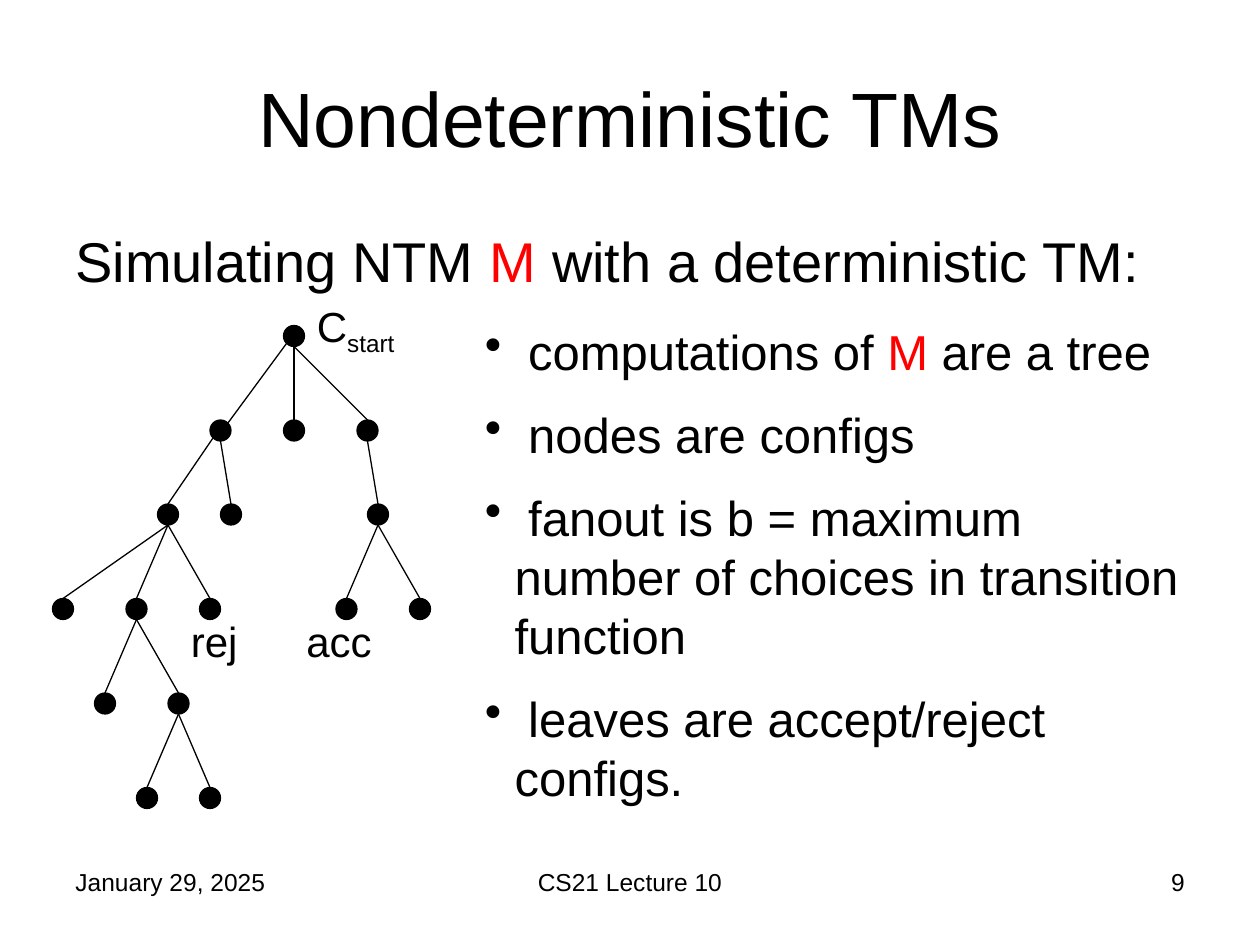
from lxml import etree
from pptx import Presentation
from pptx.dml.color import RGBColor
from pptx.enum.shapes import MSO_CONNECTOR, MSO_SHAPE
from pptx.enum.text import MSO_ANCHOR, PP_ALIGN
from pptx.oxml.ns import qn
from pptx.util import Pt

COLORS = {"ink": "000000", "machine": "FF0000"}
FONT = "Arial"

# Text boxes: (left, top, width, height), size, alignment, anchor, runs as (text, color)
TEXTS = [
    ((36, 21.6, 648, 90), 44, PP_ALIGN.CENTER, MSO_ANCHOR.MIDDLE,
     [("Nondeterministic TMs", "ink")]),
    ((36, 126, 648, 48), 32, PP_ALIGN.LEFT, MSO_ANCHOR.TOP,
     [("Simulating NTM ", "ink"), ("M", "machine"), (" with a deterministic TM:", "ink")]),
    ((102, 348, 90, 36), 24, PP_ALIGN.LEFT, MSO_ANCHOR.TOP, [("rej", "ink")]),
    ((168, 348, 90, 36), 24, PP_ALIGN.LEFT, MSO_ANCHOR.TOP, [("acc", "ink")]),
    ((36, 492, 168, 37.5), 14, PP_ALIGN.LEFT, MSO_ANCHOR.TOP, [("January 29, 2025", "ink")]),
    ((246, 492, 228, 37.5), 14, PP_ALIGN.CENTER, MSO_ANCHOR.TOP, [("CS21 Lecture 10", "ink")]),
    ((516, 492, 168, 37.5), 14, PP_ALIGN.RIGHT, MSO_ANCHOR.TOP, [("9", "ink")]),
]
START_LABEL = ((174, 168, 90, 36), 24, [("C", "ink"), ("start", "ink")])
BULLETS = [
    [(" computations of ", "ink"), ("M", "machine"), (" are a tree", "ink")],
    [(" nodes are configs", "ink")],
    [(" fanout is b = maximum number of choices in transition function", "ink")],
    [(" leaves are accept/reject configs.", "ink")],
]
BULLET_BOX, BULLET_SIZE, BULLET_INDENT = (270, 180, 414, 293), 28, 17

# Computation tree: top of each level and left of each node in it
NODE_SIZE = 12
LEVELS = [
    (186, [162]),
    (240, [120, 162, 204]),
    (288, [90, 126, 210]),
    (342, [30, 72, 114, 192, 234]),
    (396, [54, 96]),
    (450, [78, 114]),
]
# Parent index in the level above, for each node
PARENTS = [[], [0, 0, 0], [0, 0, 2], [0, 0, 0, 2, 2], [1, 1], [1, 1]]
# Points on a node, as fractions of its size
TOP, BOTTOM, TOP_RIGHT, BOTTOM_LEFT = (0.5, 0), (0.5, 1), (0.85, 0.15), (0.15, 0.85)
# Edges that leave or enter at the side, by level and child index
SIDE_EDGES = {(1, 0): (BOTTOM_LEFT, TOP_RIGHT), (2, 0): (BOTTOM_LEFT, TOP)}

presentation = Presentation()
presentation.slide_width, presentation.slide_height = Pt(720), Pt(540)
slide = presentation.slides.add_slide(presentation.slide_layouts[6])


def color(name):
    return RGBColor.from_string(COLORS[name])


def add_frame(box):
    text_frame = slide.shapes.add_textbox(*map(Pt, box)).text_frame
    text_frame.word_wrap = True
    return text_frame


def write(paragraph, runs, size):
    for text, color_name in runs:
        run = paragraph.add_run()
        run.text = text
        run.font.name, run.font.size = FONT, Pt(size)
        run.font.color.rgb = color(color_name)


def node_point(level, index, fraction):
    top, lefts = LEVELS[level]
    return Pt(lefts[index] + fraction[0] * NODE_SIZE), Pt(top + fraction[1] * NODE_SIZE)


# Title, statement, leaf labels and footer
for box, size, alignment, anchor, runs in TEXTS:
    text_frame = add_frame(box)
    text_frame.vertical_anchor = anchor
    text_frame.paragraphs[0].alignment = alignment
    write(text_frame.paragraphs[0], runs, size)

# Label of the start configuration, with its subscript
box, size, runs = START_LABEL
paragraph = add_frame(box).paragraphs[0]
write(paragraph, runs, size)
paragraph.runs[1].font._element.set("baseline", "-25000")

# Bullet list
text_frame = add_frame(BULLET_BOX)
for index, runs in enumerate(BULLETS):
    paragraph = text_frame.add_paragraph() if index else text_frame.paragraphs[0]
    write(paragraph, runs, BULLET_SIZE)
    if index:
        paragraph.space_before = Pt(BULLET_SIZE / 2)
    properties = paragraph._p.get_or_add_pPr()
    properties.set("marL", str(Pt(BULLET_INDENT)))
    properties.set("indent", str(-Pt(BULLET_INDENT)))
    etree.SubElement(properties, qn("a:buChar")).set("char", "•")

# Tree nodes and the edges to their parents
for level, (top, lefts) in enumerate(LEVELS):
    for index, left in enumerate(lefts):
        node = slide.shapes.add_shape(
            MSO_SHAPE.OVAL, Pt(left), Pt(top), Pt(NODE_SIZE), Pt(NODE_SIZE))
        node.shadow.inherit = False
        node.fill.solid()
        node.fill.fore_color.rgb = color("ink")
        node.line.color.rgb = color("ink")
        node.line.width = Pt(0.75)
    for index, parent in enumerate(PARENTS[level]):
        leave, enter = SIDE_EDGES.get((level, index), (BOTTOM, TOP))
        edge = slide.shapes.add_connector(
            MSO_CONNECTOR.STRAIGHT,
            *node_point(level - 1, parent, leave), *node_point(level, index, enter))
        edge.line.color.rgb = color("ink")
        edge.line.width = Pt(0.75)
        etree.SubElement(edge._element.spPr, qn("a:effectLst"))

presentation.save("out.pptx")
